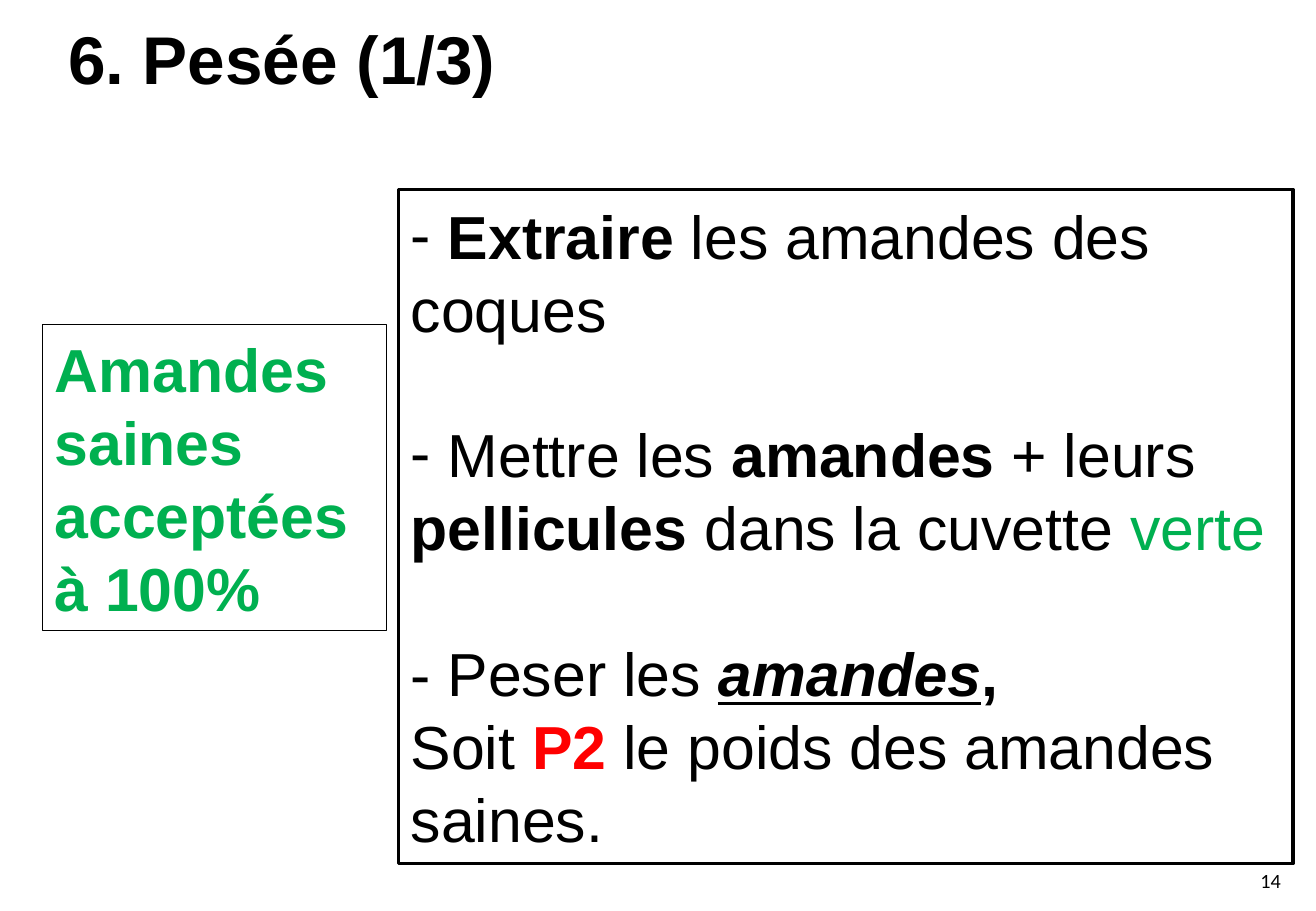
import dataclasses
import typing

import lxml.etree
import pptx
import pptx.dml.color
import pptx.enum.shapes
import pptx.enum.text
import pptx.oxml.ns
import pptx.util

Inches = pptx.util.Inches
Pt = pptx.util.Pt
ALIGN = pptx.enum.text.PP_ALIGN

COLORS = {"black": "000000", "white": "FFFFFF", "green": "00B050", "red": "FF0000"}
LINE_PITCH = Pt(43.2)
BODY_SIZE = 36


@dataclasses.dataclass(frozen=True)
class Run:
    text: str
    color: str = "black"
    bold: bool = False
    italic: bool = False
    underline: bool = False


@dataclasses.dataclass(frozen=True)
class Para:
    runs: tuple[Run, ...]
    bullet: str = ""
    gap: bool = False


@dataclasses.dataclass(frozen=True)
class Box:
    left: float
    top: float
    width: float
    height: float

    def lengths(self) -> list[int]:
        return [Inches(v) for v in dataclasses.astuple(self)]


TITLE_BOX = Box(0.27, 0.12, 9.6, 0.71)
NUMBER_BOX = Box(9.96, 7.07, 0.68, 0.35)
RESULT_BOX = Box(0.35, 2.67, 2.83, 2.52)
STEPS_BOX = Box(3.28, 1.56, 7.36, 5.55)

STEPS = [
    Para((Run(" "), Run("Extraire", bold=True), Run(" les amandes des coques")), bullet="-"),
    Para((Run(" Mettre les "), Run("amandes", bold=True), Run(" + leurs "),
          Run("pellicules", bold=True), Run(" dans la cuvette "),
          Run("verte", "green")), bullet="-", gap=True),
    Para((Run("- Peser les "), Run("amandes", bold=True, italic=True, underline=True),
          Run(",", bold=True)), gap=True),
    Para((Run("Soit "), Run("P2 ", "red", bold=True), Run("le poids des amandes saines."))),
]


def rgb(name: str) -> pptx.dml.color.RGBColor:
    return pptx.dml.color.RGBColor.from_string(COLORS[name])


def set_all(target: typing.Any, values: dict[str, typing.Any]) -> None:
    for name, value in values.items():
        setattr(target, name, value)


def place(s: typing.Any, box: Box) -> None:
    set_all(s, dict(zip(("left", "top", "width", "height"), box.lengths())))


def set_bullet(p: typing.Any, char: str, left: float = 0, indent: float = 0) -> None:
    """Set the indents and the bullet; an empty char turns the bullet off."""
    pPr = p._p.get_or_add_pPr()
    pPr.set("marL", str(Inches(left)))
    pPr.set("indent", str(Inches(indent)))
    bu = lxml.etree.SubElement(pPr, pptx.oxml.ns.qn("a:buChar" if char else "a:buNone"))
    if char:
        bu.set("char", char)


def add_run(p: typing.Any, run: Run, size: float, font: str = "Arial") -> None:
    r = p.add_run()
    r.text = run.text
    set_all(r.font, {"name": font, "size": Pt(size), "bold": run.bold,
                     "italic": run.italic, "underline": run.underline})
    r.font.color.rgb = rgb(run.color)


def prepare(s: typing.Any) -> typing.Any:
    """Give the text frame of s the common layout and return it."""
    tf = s.text_frame
    set_all(tf, {"word_wrap": True, "auto_size": pptx.enum.text.MSO_AUTO_SIZE.NONE,
                 "vertical_anchor": pptx.enum.text.MSO_ANCHOR.MIDDLE})
    return tf


def set_outline(s: typing.Any, width: float) -> None:
    s.line.color.rgb = rgb("black")
    s.line.width = Pt(width)


def write_body(s: typing.Any, paras: list[Para]) -> None:
    tf = prepare(s)
    for i, para in enumerate(paras):
        p = tf.add_paragraph() if i else tf.paragraphs[0]
        set_bullet(p, para.bullet)
        set_all(p, {"alignment": ALIGN.LEFT, "line_spacing": LINE_PITCH,
                    "space_before": LINE_PITCH if para.gap else Pt(0)})
        for run in para.runs:
            add_run(p, run, BODY_SIZE)


def add_title(sp: typing.Any) -> None:
    s = sp.title
    place(s, TITLE_BOX)
    tf = prepare(s)
    set_all(tf, {"margin_left": Inches(0.08), "margin_right": Inches(0.21),
                 "margin_top": Inches(0.04), "margin_bottom": Inches(0.04)})
    p = tf.paragraphs[0]
    set_bullet(p, "", 0.2, 0.01)
    p.alignment = ALIGN.LEFT
    add_run(p, Run("6. Pesée (1/3)", bold=True), 40)


def add_number(sp: typing.Any) -> None:
    p = prepare(sp.add_textbox(*NUMBER_BOX.lengths())).paragraphs[0]
    p.alignment = ALIGN.RIGHT
    add_run(p, Run("14"), 12, "Calibri")


def add_result(sp: typing.Any) -> None:
    s = sp.add_shape(pptx.enum.shapes.MSO_SHAPE.RECTANGLE, *RESULT_BOX.lengths())
    s.shadow.inherit = False
    s.fill.background()
    set_outline(s, 0.75)
    write_body(s, [Para((Run("Amandes saines acceptées à 100%", "green", bold=True),))])


def add_steps(sp: typing.Any) -> None:
    s = sp.placeholders[1]
    place(s, STEPS_BOX)
    s.fill.solid()
    s.fill.fore_color.rgb = rgb("white")
    set_outline(s, 2)
    write_body(s, STEPS)


def main() -> None:
    prs = pptx.Presentation()
    set_all(prs, {"slide_width": Inches(10.83), "slide_height": Inches(7.5)})
    slide = prs.slides.add_slide(prs.slide_layouts[1])
    sp = slide.shapes
    add_title(sp)
    add_number(sp)
    add_result(sp)
    add_steps(sp)
    prs.save("out.pptx")


if __name__ == "__main__":
    main()
